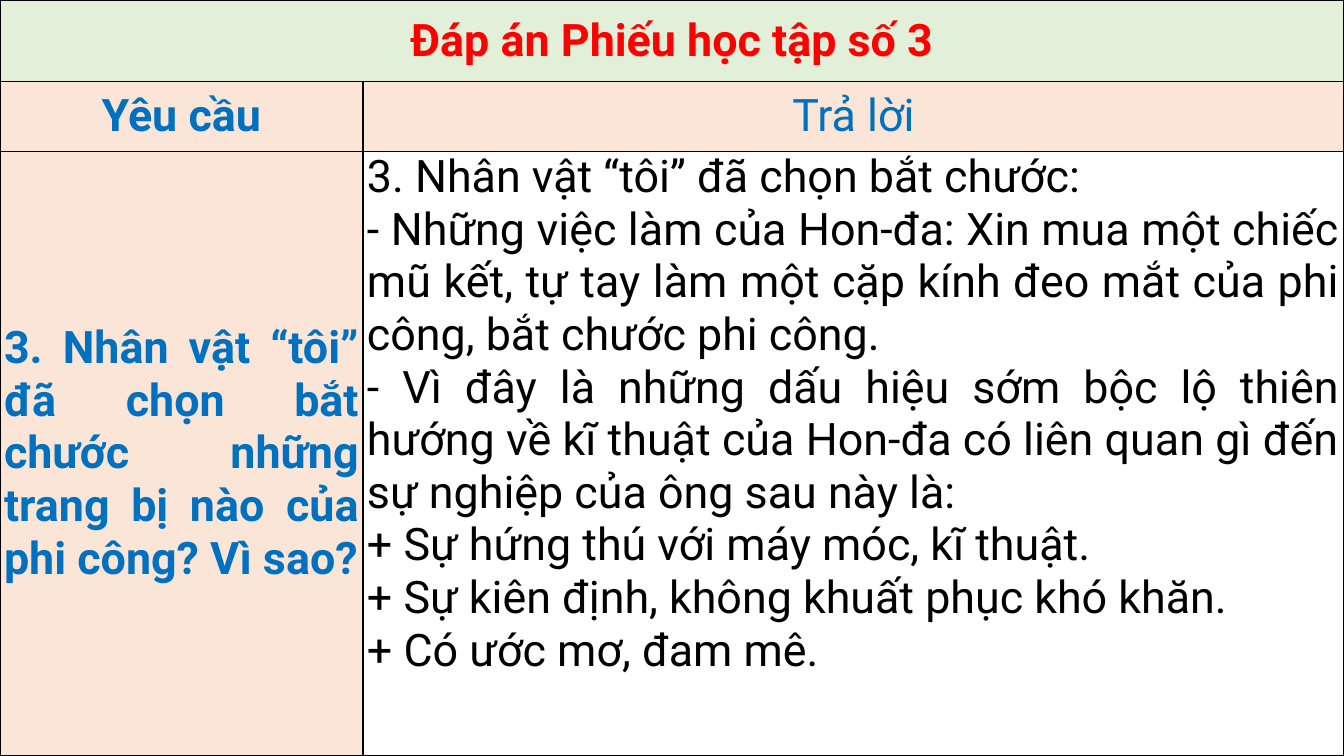
from lxml.etree import SubElement
from pptx import Presentation
from pptx.dml.color import RGBColor
from pptx.enum.text import MSO_ANCHOR, PP_ALIGN
from pptx.oxml.ns import qn
from pptx.util import Inches, Pt

RED, BLUE, BLACK = "FF0000", "0070C0", "000000"
GREEN_TINT, ORANGE_TINT, WHITE = "E2F0D9", "FBE5D6", "FFFFFF"
COLUMN_WIDTHS = (3.6, 9.73)
ROW_HEIGHTS = (0.81, 0.69, 6)

TITLE = "Đáp án Phiếu học tập số 3"
QUESTION = "3. Nhân vật “tôi” đã chọn bắt chước những trang bị nào của phi công? Vì sao?"
EXPLANATIONS = [
    "3. Nhân vật “tôi” đã chọn bắt chước: ",
    "- Những việc làm của Hon-đa: Xin mua một chiếc mũ kết, tự tay làm một cặp "
    "kính đeo mắt của phi công, bắt chước phi công.",
    "- Vì đây là những dấu hiệu sớm bộc lộ thiên hướng về kĩ thuật của Hon-đa "
    "có liên quan gì đến sự nghiệp của ông sau này là:",
]
QUALITIES = [
    "+ Sự hứng thú với máy móc, kĩ thuật.",
    "+ Sự kiên định, không khuất phục khó khăn.",
    "+ Có ước mơ, đam mê.",
]


def rgb(hex_color):
    return RGBColor.from_string(hex_color)


def add_borders(cell):
    """Draw black 1 pt lines; they must be added before the cell's fill."""
    properties = cell._tc.get_or_add_tcPr()
    for side in ("lnL", "lnR", "lnT", "lnB"):
        line = SubElement(properties, qn(f"a:{side}"), w=str(Pt(1)))
        fill = SubElement(line, qn("a:solidFill"))
        SubElement(fill, qn("a:srgbClr"), val=BLACK)


def style_cell(cell, fill, anchor=MSO_ANCHOR.MIDDLE):
    cell.fill.solid()
    cell.fill.fore_color.rgb = rgb(fill)
    cell.vertical_anchor = anchor
    cell.margin_left = cell.margin_right = Inches(0.04)
    cell.margin_top = cell.margin_bottom = 0


def write_lines(cell, lines, color, bold=False):
    """Write (text, alignment) pairs, one paragraph each."""
    frame = cell.text_frame
    for index, (text, alignment) in enumerate(lines):
        paragraph = frame.add_paragraph() if index else frame.paragraphs[0]
        paragraph.alignment = alignment
        run = paragraph.add_run()
        run.text = text
        run.font.name = "Roboto"
        run.font.size = Pt(32)
        run.font.bold = bold
        run.font.color.rgb = rgb(color)


def add_answer_table(slide):
    table = slide.shapes.add_table(
        len(ROW_HEIGHTS), len(COLUMN_WIDTHS), 0, 0,
        Inches(sum(COLUMN_WIDTHS)), Inches(sum(ROW_HEIGHTS))).table
    table.first_row = table.horz_banding = False
    for column, width in zip(table.columns, COLUMN_WIDTHS):
        column.width = Inches(width)
    for row, height in zip(table.rows, ROW_HEIGHTS):
        row.height = Inches(height)
    for cell in table.iter_cells():
        add_borders(cell)
    return table


def main():
    presentation = Presentation()
    presentation.slide_width = Inches(13.33)
    presentation.slide_height = Inches(7.5)
    slide = presentation.slides.add_slide(presentation.slide_layouts[6])
    table = add_answer_table(slide)

    title = table.cell(0, 0)
    title.merge(table.cell(0, 1))
    style_cell(title, GREEN_TINT)
    write_lines(title, [(TITLE, PP_ALIGN.CENTER)], RED, bold=True)

    prompts = [
        (1, 0, "Yêu cầu", PP_ALIGN.CENTER, True),
        (1, 1, "Trả lời", PP_ALIGN.CENTER, False),
        (2, 0, QUESTION, PP_ALIGN.JUSTIFY, True),
    ]
    for row, column, text, alignment, bold in prompts:
        prompt = table.cell(row, column)
        style_cell(prompt, ORANGE_TINT)
        write_lines(prompt, [(text, alignment)], BLUE, bold)

    answer = table.cell(2, 1)
    style_cell(answer, WHITE, MSO_ANCHOR.TOP)
    answer_lines = [(text, PP_ALIGN.JUSTIFY) for text in EXPLANATIONS]
    answer_lines += [(text, PP_ALIGN.LEFT) for text in QUALITIES]
    write_lines(answer, answer_lines, BLACK)

    presentation.save("out.pptx")


if __name__ == "__main__":
    main()
